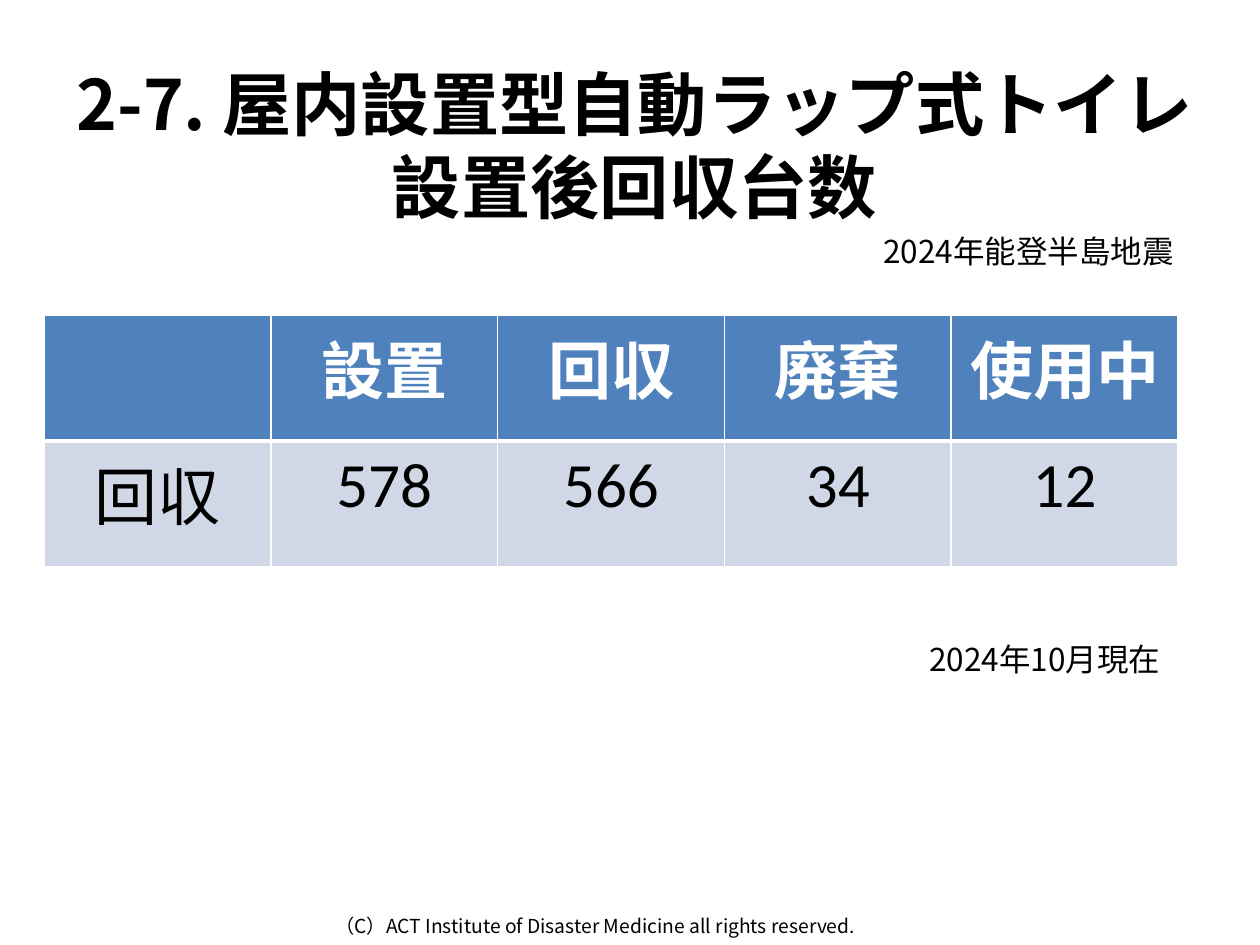
from lxml import etree
from pptx import Presentation
from pptx.dml.color import RGBColor
from pptx.enum.text import MSO_ANCHOR, PP_ALIGN
from pptx.oxml.ns import qn
from pptx.util import Pt

PX = 914400 / 126
BLACK = RGBColor(0x00, 0x00, 0x00)
WHITE = RGBColor(0xFF, 0xFF, 0xFF)
BLUE = RGBColor(0x4F, 0x81, 0xBD)
PALE = RGBColor(0xD0, 0xD8, 0xE8)
CENTER, MIDDLE = PP_ALIGN.CENTER, MSO_ANCHOR.MIDDLE
JP_FONT = "Noto Sans CJK JP"


def format_runs(p, size, color, font=JP_FONT, bold=False):
    for r in p.runs:
        r.font.size = Pt(size)
        r.font.bold = bold
        r.font.color.rgb = color
        r.font.name = font
        ea = etree.SubElement(r.font._element, qn("a:ea"))
        ea.set("typeface", JP_FONT)


def add_border(cell, side, width):
    ln = etree.SubElement(cell._tc.get_or_add_tcPr(), qn("a:" + side))
    ln.set("w", str(Pt(width)))
    fill = etree.SubElement(ln, qn("a:solidFill"))
    etree.SubElement(fill, qn("a:srgbClr")).set("val", str(WHITE))


prs = Presentation()
prs.slide_width, prs.slide_height = round(1260 * PX), round(945 * PX)
s = prs.slides.add_slide(prs.slide_layouts[5])

# Title
title = s.shapes.title
title.left, title.top, title.width, title.height = [round(v * PX) for v in (44, 66, 1181, 157)]
tf = title.text_frame
tf.text = "2-7. 屋内設置型自動ラップ式トイレ\v設置後回収台数"
tf.word_wrap = True
tf.vertical_anchor = MIDDLE
tf.paragraphs[0].alignment = CENTER
format_runs(tf.paragraphs[0], 39.6, BLACK, bold=True)

# Table of units
rows = [["", "設置", "回収", "廃棄", "使用中"],
        ["回収", "578", "566", "34", "12"]]
frame = s.shapes.add_table(2, 5, *[round(v * PX) for v in (44, 315, 1134, 252)])
for i, row in enumerate(rows):
    header = i == 0
    for j, text in enumerate(row):
        cell = frame.table.cell(i, j)
        cell.text = text
        p = cell.text_frame.paragraphs[0]
        p.alignment = CENTER
        format_runs(p, 36, WHITE if header else BLACK, "Calibri", header)
        for side in ("lnL", "lnR", "lnT", "lnB"):
            inner = side == ("lnB" if header else "lnT")
            add_border(cell, side, 3 if inner else 1)
        cell.fill.solid()
        cell.fill.fore_color.rgb = BLUE if header else PALE

# Event, date and copyright line
for text, size, box in [
    ("2024年能登半島地震", 18, (871, 226, 326, 50)),
    ("2024年10月現在", 18, (917, 634, 271, 50)),
    ("（C）ACT Institute of Disaster Medicine all rights reserved.", 11, (323, 908, 630, 37)),
]:
    tf = s.shapes.add_textbox(*[round(v * PX) for v in box]).text_frame
    tf.text = text
    tf.word_wrap = True
    format_runs(tf.paragraphs[0], size, BLACK)

prs.save("out.pptx")
